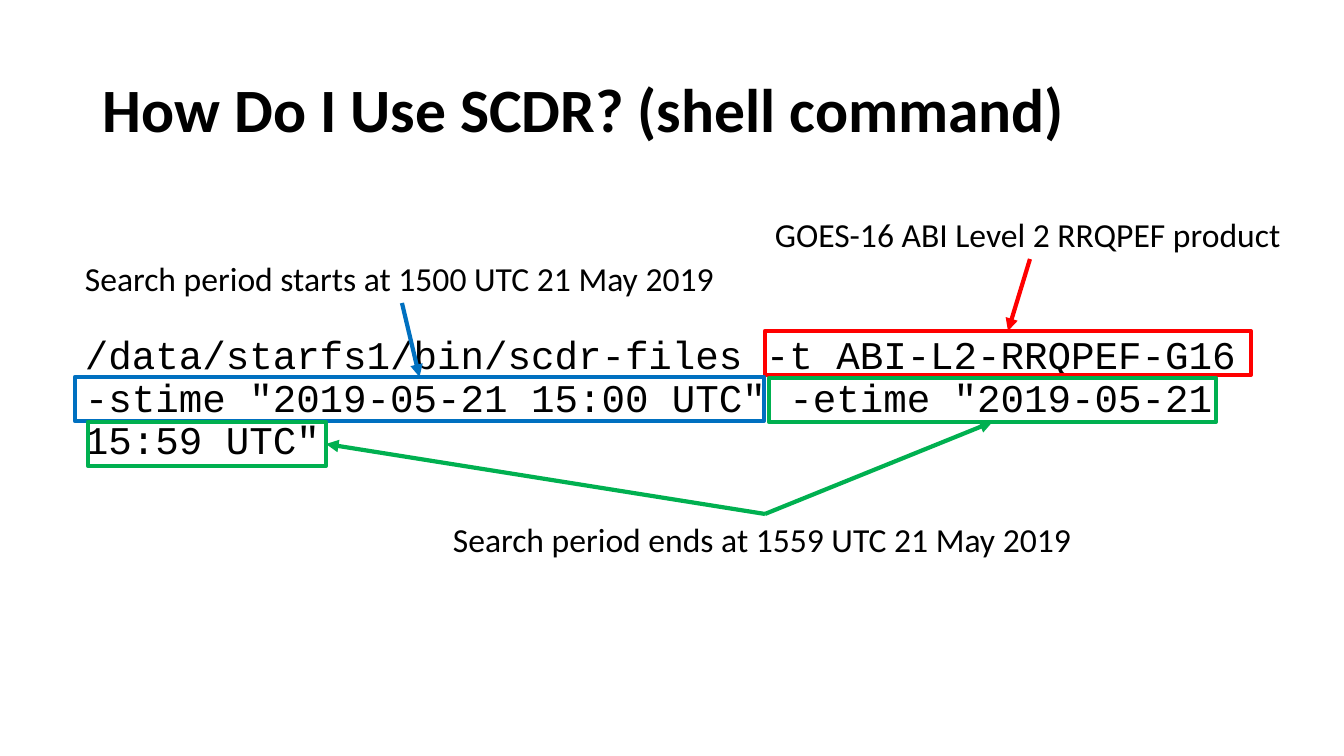
from lxml.etree import SubElement
from pptx import Presentation
from pptx.dml.color import RGBColor
from pptx.enum.shapes import MSO_CONNECTOR, MSO_SHAPE
from pptx.enum.text import MSO_ANCHOR, MSO_AUTO_SIZE
from pptx.oxml.ns import qn
from pptx.util import Emu, Pt

# Content: boxes are (left, top, width, height) in px
COLORS = {"text": "000000", "product": "FF0000", "start": "0070C0", "end": "00B050"}
TITLE = ("How Do I Use SCDR? (shell command)", (93, 40, 1159, 146))
COMMAND = (
    '/data/starfs1/bin/scdr-files -t ABI-L2-RRQPEF-G16 '
    '-stime "2019-05-21 15:00 UTC" -etime "2019-05-21 15:59 UTC"',
    (75, 331, 1211, 137),
)
TOP, LEFT, BOTTOM, RIGHT = range(4)
# Color, label, label box, label side, [(framed part of the command, side)]
CALLOUTS = [
    ("product", "GOES-16 ABI Level 2 RRQPEF product", (765, 209, 530, 50), BOTTOM,
     [((765, 331, 486, 44), TOP)]),
    ("start", "Search period starts at 1500 UTC 21 May 2019", (75, 253, 654, 50), BOTTOM,
     [((75, 377, 689, 44), TOP)]),
    ("end", "Search period ends at 1559 UTC 21 May 2019", (443, 514, 644, 50), TOP,
     [((88, 422, 238, 44), RIGHT), ((769, 378, 447, 44), BOTTOM)]),
]
LINE_WIDTH = Pt(3)
PX = 914400 / 100.8


def px(*lengths):
    return [Emu(round(length * PX)) for length in lengths]


def color(name):
    return RGBColor.from_string(COLORS[name])


def add_text(page, text, box, font, size, bold=False, wrap=True):
    shape = page.shapes.add_textbox(*px(*box))
    frame = shape.text_frame
    frame.word_wrap = wrap
    para = frame.paragraphs[0]
    para.text = text
    para.font.name, para.font.size, para.font.bold = font, Pt(size), bold
    para.font.color.rgb = color("text")
    return shape


def add_frame(page, box, name):
    frame = page.shapes.add_shape(MSO_SHAPE.RECTANGLE, *px(*box))
    frame.shadow.inherit = False
    frame.fill.background()
    frame.line.color.rgb = color(name)
    frame.line.width = LINE_WIDTH
    return frame


def add_arrow(page, label, label_side, frame, frame_side, name):
    arrow = page.shapes.add_connector(MSO_CONNECTOR.STRAIGHT, 0, 0, 0, 0)
    arrow.begin_connect(label, label_side)
    arrow.end_connect(frame, frame_side)
    arrow.line.color.rgb = color(name)
    arrow.line.width = LINE_WIDTH
    properties = arrow._element.spPr
    SubElement(properties.find(qn("a:ln")), qn("a:tailEnd"), type="triangle")
    SubElement(properties, qn("a:effectLst"))


def main():
    deck = Presentation()
    deck.slide_width, deck.slide_height = px(1344, 756)
    page = deck.slides.add_slide(deck.slide_layouts[6])

    # Title and command
    title = add_text(page, *TITLE, "Calibri", 44, bold=True).text_frame
    title.vertical_anchor = MSO_ANCHOR.MIDDLE
    title.paragraphs[0].line_spacing = 0.9
    command = add_text(page, *COMMAND, "Courier New", 28).text_frame.paragraphs[0]
    command.line_spacing = 0.9
    command.space_before = Pt(10)

    # Labels with arrows to the framed parts of the command
    for name, text, box, label_side, targets in CALLOUTS:
        label = add_text(page, text, box, "Calibri", 24, wrap=False)
        label.text_frame.auto_size = MSO_AUTO_SIZE.SHAPE_TO_FIT_TEXT
        for target, frame_side in targets:
            frame = add_frame(page, target, name)
            add_arrow(page, label, label_side, frame, frame_side, name)

    deck.save("out.pptx")


if __name__ == "__main__":
    main()
